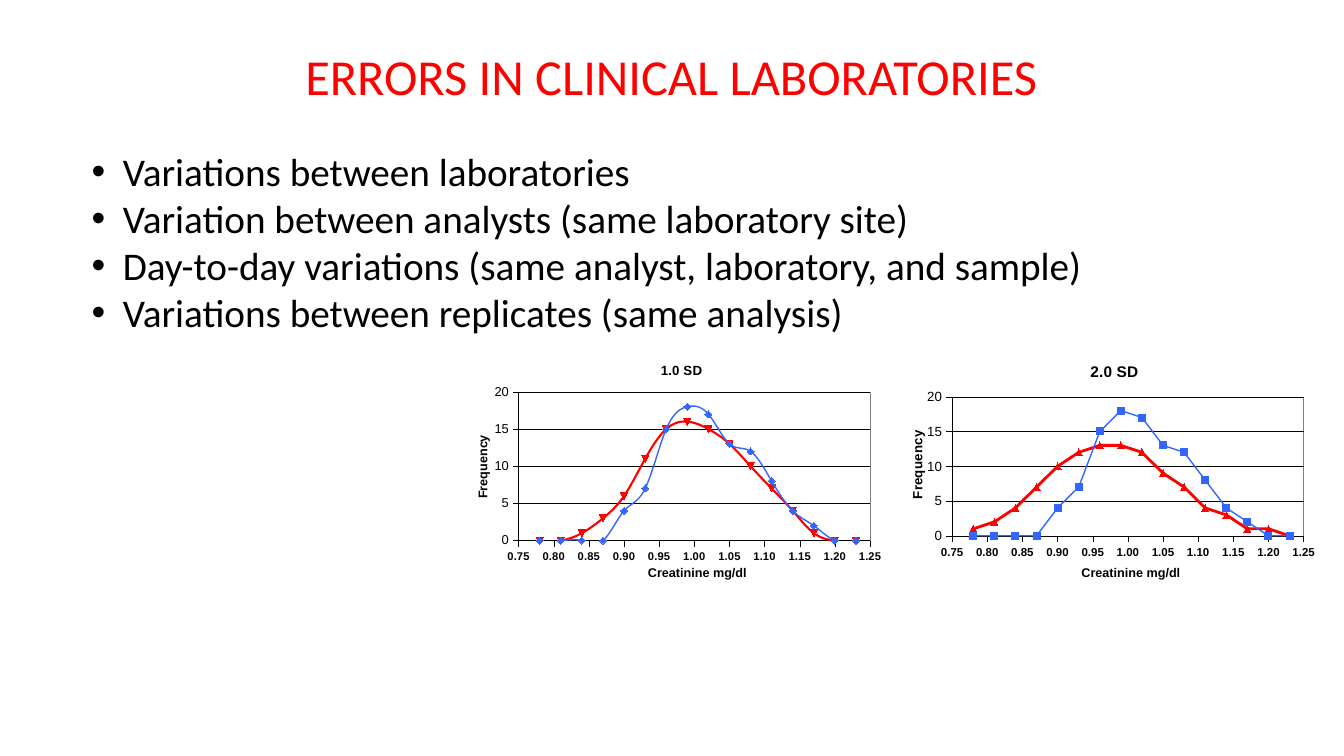
from dataclasses import dataclass

from pptx import Presentation
from pptx.chart.data import XyChartData
from pptx.dml.color import RGBColor
from pptx.enum.chart import XL_CHART_TYPE as ChartType, XL_MARKER_STYLE as Marker
from pptx.enum.chart import XL_TICK_MARK as TickMark
from pptx.enum.text import MSO_AUTO_SIZE as AutoSize, PP_ALIGN as Align
from pptx.oxml import parse_xml
from pptx.oxml.ns import nsdecls, qn
from pptx.util import Pt

EMU_PER_PX = 9144


@dataclass(frozen=True)
class Theme:
    red: str = "FF0000"
    blue: str = "3366FF"
    black: str = "000000"
    white: str = "FFFFFF"
    grey: str = "808080"
    text_font: str = "Calibri"
    chart_font: str = "Arial"
    title_size: int = 36
    bullet_size: int = 28
    chart_size: int = 11
    axis_title_size: float = 9
    hairline: float = 0.25
    marker_size: int = 5


THEME = Theme()
BULLETS = [
    "Variations between laboratories",
    "Variation between analysts (same laboratory site)",
    "Day-to-day variations (same analyst, laboratory, and sample)",
    "Variations between replicates (same analysis)",
]
CREATININE = [round(0.78 + 0.03 * step, 2) for step in range(16)]
REFERENCE = [0, 0, 0, 0, 4, 7, 15, 18, 17, 13, 12, 8, 4, 2, 0, 0]
ONE_SD = {
    "title": "1.0 SD", "type": ChartType.XY_SCATTER_SMOOTH, "smooth": True,
    "counts": [0, 0, 1, 3, 6, 11, 15, 16, 15, 13, 10, 7, 4, 1, 0, 0],
    "markers": (Marker.DIAMOND, Marker.AUTOMATIC), "red_width": 1.5,
    "title_size": 9.5, "x_size": 8, "y_size": 9.2, "y_title_size": 9,
    "plot": (0.12, 0.18, 0.83, 0.62),
    "title_at": (0.45, 0.04), "x_title_at": (0.42, 0.89), "y_title_at": (0.01, 0.35),
}
TWO_SD = {
    "title": "2.0 SD", "type": ChartType.XY_SCATTER_LINES, "smooth": False,
    "counts": [1, 2, 4, 7, 10, 12, 13, 13, 12, 9, 7, 4, 3, 1, 1, 0],
    "markers": (Marker.SQUARE, Marker.TRIANGLE), "red_width": 2,
    "title_size": 11, "x_size": 8.2, "y_size": 9.5, "y_title_size": 9.5,
    "plot": (0.12, 0.2, 0.83, 0.58),
    "title_at": (0.44, 0.04), "x_title_at": (0.42, 0.89), "y_title_at": (0.01, 0.33),
}


def px(*lengths):
    return [length * EMU_PER_PX for length in lengths]


def set_all(target, values):
    for name, value in values.items():
        setattr(target, name, value)


def set_font(font, size, color=THEME.black, name=THEME.chart_font, bold=False):
    set_all(font, {"size": Pt(size), "name": name, "bold": bold})
    font.color.rgb = RGBColor.from_string(color)


def set_line(line, color, width):
    line.color.rgb = RGBColor.from_string(color)
    line.width = Pt(width)


def add_text(slide, box, lines, size, color):
    frame = slide.shapes.add_textbox(*px(*box)).text_frame
    set_all(frame, {"word_wrap": True, "auto_size": AutoSize.SHAPE_TO_FIT_TEXT})
    for number, line in enumerate(lines):
        para = frame.add_paragraph() if number else frame.paragraphs[0]
        span = para.add_run()
        span.text = line
        set_font(span.font, size, color, THEME.text_font)
    return frame


def add_title(slide, box):
    frame = add_text(slide, box, ["ERRORS IN CLINICAL LABORATORIES"],
                     THEME.title_size, THEME.red)
    frame.paragraphs[0].alignment = Align.CENTER


def add_bullets(slide, box):
    frame = add_text(slide, box, BULLETS, THEME.bullet_size, THEME.black)
    indent, = px(31)
    for para in frame.paragraphs:
        properties = para._p.get_or_add_pPr()
        properties.set("marL", str(indent))
        properties.set("indent", str(-indent))
        properties.append(parse_xml(
            f'<a:buFont {nsdecls("a")} typeface="Arial"/>'))
        properties.append(parse_xml(f'<a:buChar {nsdecls("a")} char="•"/>'))


def set_layout(element, index, fractions, target=""):
    """Fix a chart part at fractions (x, y[, w, h]) of the chart area."""
    for old in element.findall(qn("c:layout")):
        element.remove(old)
    places = dict(zip("xywh", fractions))
    modes = "".join(f'<c:{key}Mode val="edge"/>' for key in "xy")
    values = "".join(f'<c:{key} val="{value}"/>' for key, value in places.items())
    element.insert(index, parse_xml(
        f'<c:layout {nsdecls("c")}><c:manualLayout>{target}{modes}{values}'
        '</c:manualLayout></c:layout>'))


def set_chart_title(title, text, size, place):
    span = title.text_frame.paragraphs[0].add_run()
    span.text = text
    set_font(span.font, size, bold=True)
    set_layout(title.element, 1, place)


def area_format(content):
    return parse_xml(f'<c:spPr {nsdecls("c", "a")}>{content}</c:spPr>')


def solid(color):
    return f'<a:solidFill><a:srgbClr val="{color}"/></a:solidFill>'


def format_areas(chart, plot):
    area = chart.element.find(".//" + qn("c:plotArea"))
    set_layout(area, 0, plot, '<c:layoutTarget val="inner"/>')
    border = Pt(THEME.hairline)
    area.append(area_format(
        f'<a:noFill/><a:ln w="{border}">{solid(THEME.grey)}</a:ln>'))
    chart.element.find(qn("c:chart")).addnext(area_format(
        f'{solid(THEME.white)}<a:ln><a:noFill/></a:ln>'))


def format_axis(axis, scale, size, bold, number_format):
    low, high, step = scale
    set_all(axis, {"minimum_scale": low, "maximum_scale": high, "major_unit": step,
                   "major_tick_mark": TickMark.OUTSIDE,
                   "minor_tick_mark": TickMark.NONE})
    set_all(axis.tick_labels, {"number_format": number_format,
                               "number_format_is_linked": False})
    set_font(axis.tick_labels.font, size, bold=bold)
    set_line(axis.format.line, THEME.black, THEME.hairline)


def add_frequency_chart(slide, box, look):
    data = XyChartData()
    for number, counts in enumerate((REFERENCE, look["counts"]), 1):
        series = data.add_series(f"Series {number}")
        for level, count in zip(CREATININE, counts):
            series.add_data_point(level, count)
    chart = slide.shapes.add_chart(look["type"], *px(*box), data).chart
    set_all(chart, {"has_legend": False, "has_title": True})
    set_font(chart.font, THEME.chart_size)

    across, up = chart.category_axis, chart.value_axis
    format_axis(across, (0.75, 1.25, 0.05), look["x_size"], True, "0.00")
    format_axis(up, (0, 20, 5), look["y_size"], False, "General")
    across.has_major_gridlines = False
    up.has_major_gridlines = True
    set_line(up.major_gridlines.format.line, THEME.black, THEME.hairline)

    set_chart_title(chart.chart_title, look["title"], look["title_size"],
                    look["title_at"])
    set_chart_title(across.axis_title, "Creatinine mg/dl", THEME.axis_title_size,
                    look["x_title_at"])
    set_chart_title(up.axis_title, "Frequency", look["y_title_size"],
                    look["y_title_at"])

    colors, widths = (THEME.blue, THEME.red), (1, look["red_width"])
    for series, color, width, style in zip(chart.plots[0].series, colors, widths,
                                           look["markers"]):
        set_line(series.format.line, color, width)
        set_all(series.marker, {"style": style, "size": THEME.marker_size})
        series.marker.format.fill.solid()
        series.marker.format.fill.fore_color.rgb = RGBColor.from_string(color)
        set_line(series.marker.format.line, color, THEME.hairline)
    for smooth in chart.element.iter(qn("c:smooth")):
        smooth.set("val", str(int(look["smooth"])))
    format_areas(chart, look["plot"])


def main():
    deck = Presentation()
    deck.slide_width, deck.slide_height = px(1333, 750)
    slide = deck.slides.add_slide(deck.slide_layouts[6])
    add_title(slide, (64, 40, 1204, 71))
    add_bullets(slide, (81, 141, 1186, 199))
    for left, look in ((894, TWO_SD), (464, ONE_SD)):
        add_frequency_chart(slide, (left, 346, 420, 238), look)
    deck.save("out.pptx")


if __name__ == "__main__":
    main()
